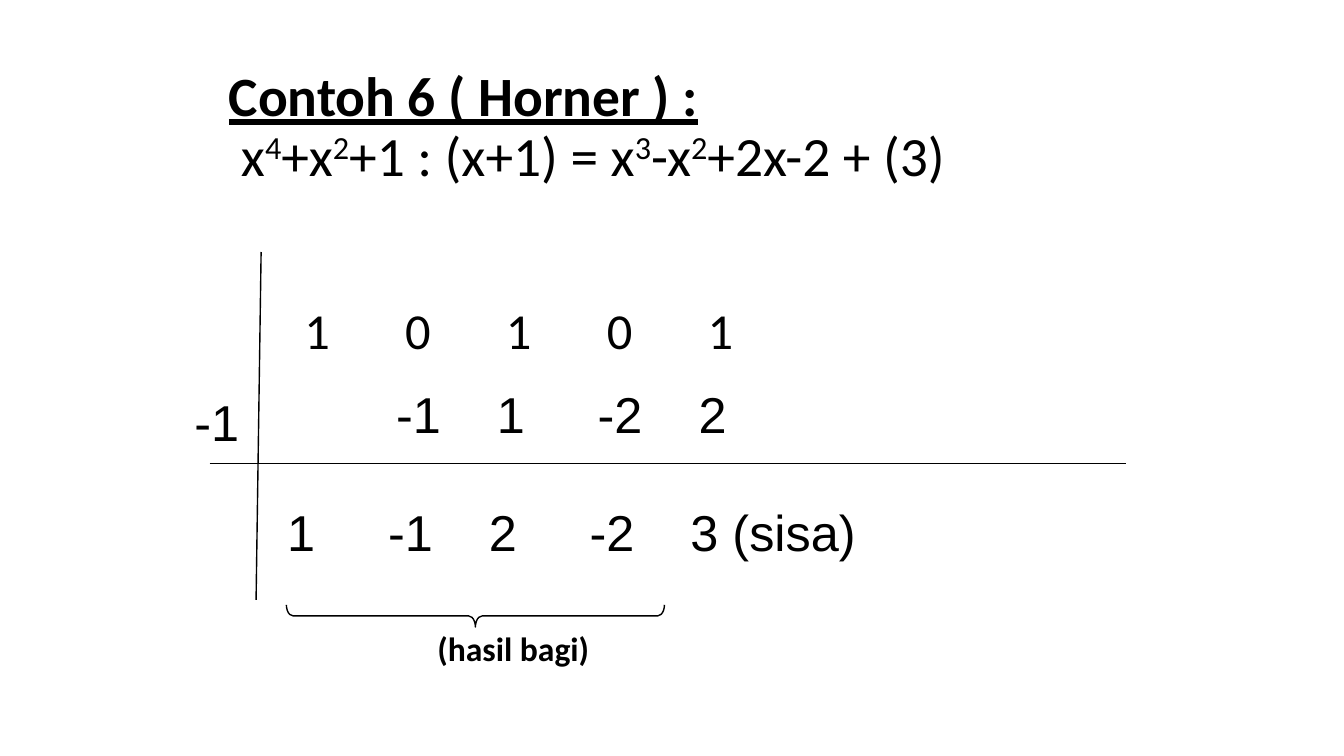
from lxml.etree import SubElement
from pptx import Presentation
from pptx.dml.color import RGBColor
from pptx.enum.shapes import MSO_CONNECTOR as Connector, MSO_SHAPE as Shape
from pptx.enum.text import MSO_ANCHOR as Anchor, MSO_AUTO_SIZE as AutoSize, PP_ALIGN as Align
from pptx.oxml.ns import qn
from pptx.util import Inches, Pt

COLORS = {"ink": "000000", "paper": "FFFFFF"}
INK = RGBColor.from_string(COLORS["ink"])
POLYNOMIALS = [("x", 0), ("4", 30), ("+x", 0), ("2", 30), ("+1 : (x+1) = x", 0),
               ("3", 30), ("-x", 0), ("2", 30), ("+2x-2 + (3)", 0)]


def add_run(paragraph, text, size, font, bold=False, underline=False, raised=0):
    """Append one formatted run, raised by a percentage when superscript."""
    run = paragraph.add_run()
    run.text = text
    run.font.size, run.font.name = Pt(size), font
    run.font.bold, run.font.underline = bold, underline
    run.font.color.rgb = INK
    if raised:
        run.font._element.set("baseline", str(raised * 1000))


def add_label(slide, box, text, size, font, bold=False, wrap=False):
    """Place one line of text with tab stops every inch."""
    label = slide.shapes.add_textbox(*map(Inches, box))
    frame = label.text_frame
    frame.word_wrap, frame.auto_size = wrap, AutoSize.SHAPE_TO_FIT_TEXT
    paragraph = frame.paragraphs[0]
    if "\t" in text:
        stops = SubElement(paragraph._p.get_or_add_pPr(), qn("a:tabLst"))
        for inch in range(1, 5):
            SubElement(stops, qn("a:tab"), pos=str(Inches(inch)), algn="l")
    add_run(paragraph, text, size, font, bold)


def add_rule(slide, start, end):
    """Draw a thin straight line."""
    rule = slide.shapes.add_connector(Connector.STRAIGHT, *map(Inches, start + end))
    rule.line.color.rgb, rule.line.width = INK, Pt(1)
    SubElement(rule._element.spPr, qn("a:effectLst"))


def build_heading(slide, left, top, width, height):
    """Fill the title with the example name and its division."""
    title = slide.shapes.title
    title.left, title.top, title.width, title.height = map(Inches, (left, top, width, height))
    frame = title.text_frame
    frame.word_wrap, frame.auto_size = True, AutoSize.NONE
    frame.vertical_anchor = Anchor.MIDDLE
    example, division = frame.paragraphs[0], frame.add_paragraph()
    for paragraph in (example, division):
        paragraph.alignment, paragraph.line_spacing = Align.LEFT, 0.9
    division._p.get_or_add_pPr().set("marL", str(Inches(0.12)))
    add_run(example, "Contoh 6 ( Horner ) :", 39.6, "Calibri", True, True)
    for text, raised in POLYNOMIALS:
        add_run(division, text, 39.6, "Calibri", raised=raised)


def build_horner_scheme(slide, left, top, width, height):
    """Lay out the divisor, coefficient rows and rules of the scheme."""
    add_rule(slide, (left + 0.25, top + 2.1), (left + width, top + 2.1))
    add_rule(slide, (left + 0.76, top), (left + 0.71, top + height))
    add_label(slide, (left, top + 1.33, 0.65, 0.71), "-1", 36, "Arial")
    rows = [(1.09, 0.42, 4.5, "1\t0\t1\t0\t1", "Calibri"),
            (1, 1.25, 7.98, "\t-1\t1\t-2\t2", "Arial"),
            (0.92, 2.42, 7.98, "1\t-1\t2\t-2\t3 (sisa)", "Arial")]
    for across, down, row_width, values, font in rows:
        add_label(slide, (left + across, top + down, row_width, 0.71), values, 36, font, wrap=True)


def build_quotient_mark(slide, left, top, width, height):
    """Bracket the quotient from below and caption it."""
    depth = 0.22
    brace = slide.shapes.add_shape(
        Shape.LEFT_BRACE, Inches(left + (width - depth) / 2),
        Inches(top + (depth - width) / 2), Inches(depth), Inches(width))
    brace.rotation = 270
    brace.adjustments[0] = 0.306
    brace.shadow.inherit = False
    brace.fill.background()
    brace.line.color.rgb, brace.line.width = INK, Pt(1)
    add_label(slide, (left + 1.4, top + 0.18, 1.72, height - 0.18), "(hasil bagi)", 24, "Calibri", True)


def main():
    """Build and save the slide."""
    deck = Presentation()
    deck.slide_width, deck.slide_height = Inches(13.33), Inches(7.5)
    slide = deck.slides.add_slide(deck.slide_layouts[5])
    slide.background.fill.solid()
    slide.background.fill.fore_color.rgb = RGBColor.from_string(COLORS["paper"])
    build_heading(slide, 2.17, 0.3, 9, 1.95)
    build_horner_scheme(slide, 1.83, 2.5, 9.34, 3.45)
    build_quotient_mark(slide, 2.84, 6, 3.75, 0.69)
    deck.save("out.pptx")


if __name__ == "__main__":
    main()
